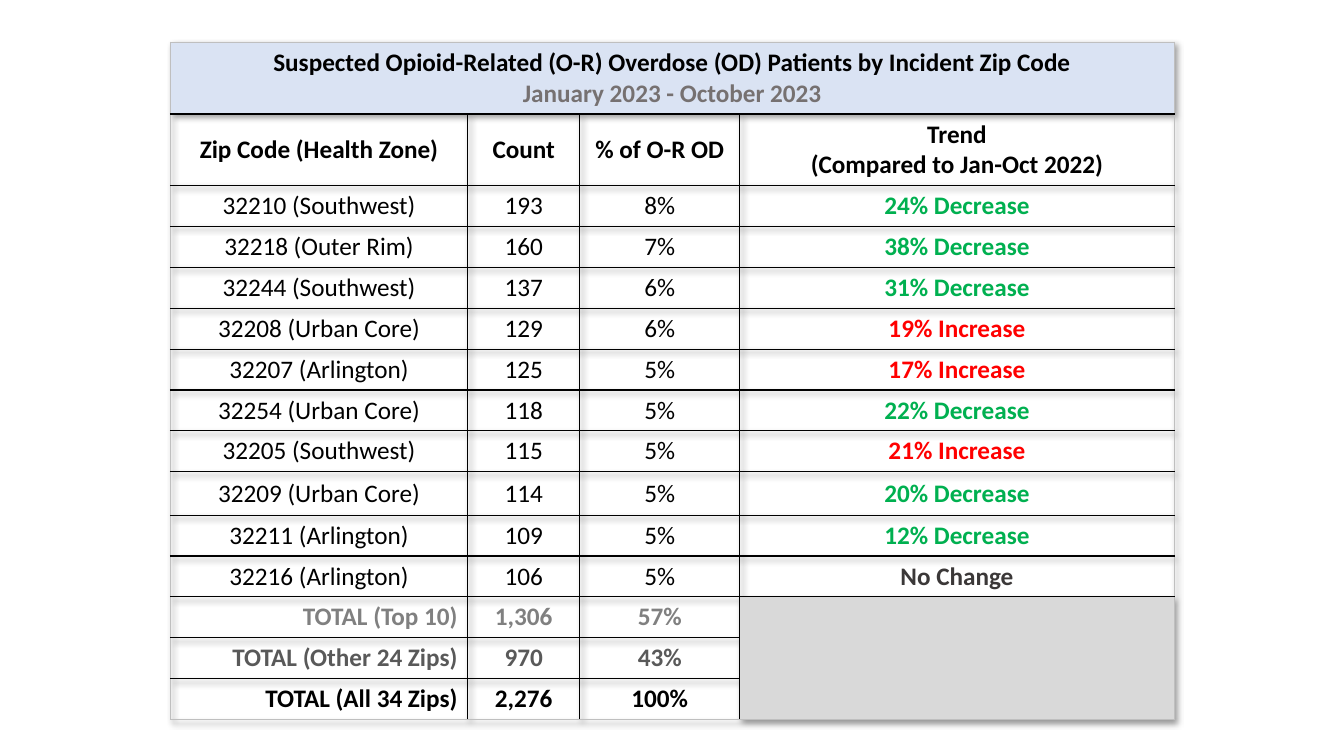
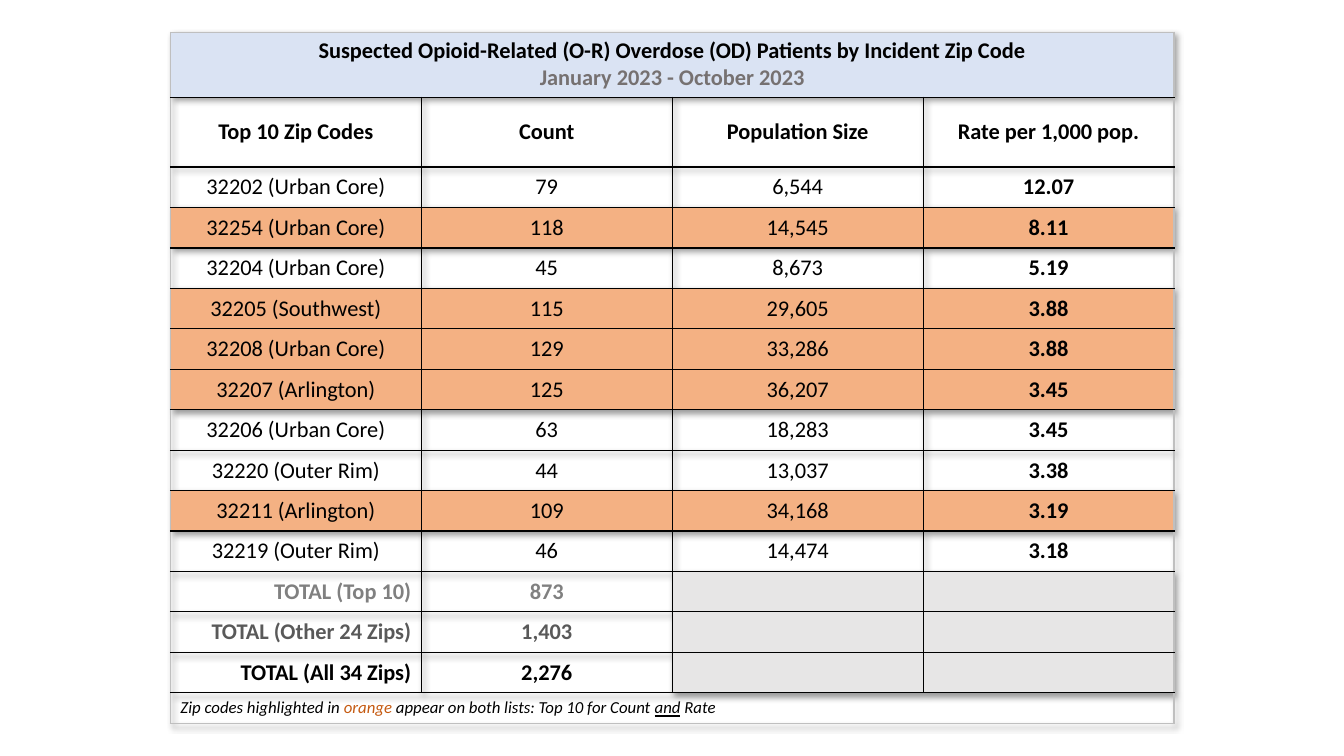
from dataclasses import dataclass

from lxml import etree
from pptx import Presentation
from pptx.dml.color import RGBColor
from pptx.enum.text import MSO_ANCHOR, PP_ALIGN
from pptx.oxml.ns import qn
from pptx.util import Pt

MIDDLE = MSO_ANCHOR.MIDDLE
CENTER, LEFT, RIGHT = PP_ALIGN.CENTER, PP_ALIGN.LEFT, PP_ALIGN.RIGHT


@dataclass(frozen=True)
class Theme:
    font: str = "Calibri"
    black: str = "000000"
    period: str = "767171"
    banner: str = "DAE3F3"
    highlight: str = "F4B183"
    highlight_word: str = "C55A11"
    decrease: str = "00B050"
    increase: str = "FF0000"
    unchanged: str = "3B3838"
    outer_edge: str = "BFBFBF"
    trend_blank: str = "D9D9D9"
    rate_blank: str = "E7E6E6"
    total_inks: tuple = ("808080", "595959", "000000")
    count_size: int = 18
    rate_size: int = 16
    note_size: int = 12
    rule: float = 1


THEME = Theme()
TABLE_LEFT, TABLE_WIDTH = 121.7, 717
BANNER = (
    "Suspected Opioid-Related (O-R) Overdose (OD) Patients by Incident Zip Code",
    "January 2023 - October 2023",
)
TOTAL_LABELS = ("TOTAL (Top 10)", "TOTAL (Other 24 Zips)", "TOTAL (All 34 Zips)")

COUNT_HEADINGS = ("Zip Code (Health Zone)", "Count", "% of O-R OD",
                  "Trend\n(Compared to Jan-Oct 2022)")
COUNT_ROWS = (
    ("32210 (Southwest)", "193", "8%", "24% Decrease"),
    ("32218 (Outer Rim)", "160", "7%", "38% Decrease"),
    ("32244 (Southwest)", "137", "6%", "31% Decrease"),
    ("32208 (Urban Core)", "129", "6%", "19% Increase"),
    ("32207 (Arlington)", "125", "5%", "17% Increase"),
    ("32254 (Urban Core)", "118", "5%", "22% Decrease"),
    ("32205 (Southwest)", "115", "5%", "21% Increase"),
    ("32209 (Urban Core)", "114", "5%", "20% Decrease"),
    ("32211 (Arlington)", "109", "5%", "12% Decrease"),
    ("32216 (Arlington)", "106", "5%", "No Change"),
)
COUNT_TOTALS = (("1,306", "57%"), ("970", "43%"), ("2,276", "100%"))

RATE_HEADINGS = ("Top 10 Zip Codes", "Count", "Population Size", "Rate per 1,000 pop.")
RATE_ROWS = (
    ("32202 (Urban Core)", "79", "6,544", "12.07"),
    ("32254 (Urban Core)", "118", "14,545", "8.11"),
    ("32204 (Urban Core)", "45", "8,673", "5.19"),
    ("32205 (Southwest)", "115", "29,605", "3.88"),
    ("32208 (Urban Core)", "129", "33,286", "3.88"),
    ("32207 (Arlington)", "125", "36,207", "3.45"),
    ("32206 (Urban Core)", "63", "18,283", "3.45"),
    ("32220 (Outer Rim)", "44", "13,037", "3.38"),
    ("32211 (Arlington)", "109", "34,168", "3.19"),
    ("32219 (Outer Rim)", "46", "14,474", "3.18"),
)
RATE_TOTALS = (("873",), ("1,403",), ("2,276",))


def add_run(paragraph, text, size, ink=THEME.black, bold=False, italic=False, underline=False):
    run = paragraph.add_run()
    run.text = text
    font = run.font
    font.name, font.size = THEME.font, Pt(size)
    font.bold, font.italic, font.underline = bold, italic, underline
    font.color.rgb = RGBColor.from_string(ink)


def write_cell(cell, text, size, ink=THEME.black, bold=False, align=CENTER):
    frame = cell.text_frame
    for index, line in enumerate(text.split("\n")):
        paragraph = frame.add_paragraph() if index else frame.paragraphs[0]
        paragraph.alignment = align
        add_run(paragraph, line, size, ink, bold)


def fill_cell(cell, colour):
    cell.fill.solid()
    cell.fill.fore_color.rgb = RGBColor.from_string(colour)


def draw_edge(cell, side, colour):
    edge = etree.SubElement(cell._tc.get_or_add_tcPr(), qn(f"a:ln{side}"),
                            w=str(Pt(THEME.rule)))
    if colour is None:
        etree.SubElement(edge, qn("a:noFill"))
    else:
        solid = etree.SubElement(edge, qn("a:solidFill"))
        etree.SubElement(solid, qn("a:srgbClr"), val=colour)


def draw_edges(table, merges):
    last_row, last_column = len(table.rows) - 1, len(table.columns) - 1
    for row in range(last_row + 1):
        for column in range(last_column + 1):
            top, left, bottom, right = next(
                (m for m in merges if m[0] <= row <= m[2] and m[1] <= column <= m[3]),
                (row, column, row, column))
            cell = table.cell(row, column)
            is_origin = (row, column) == (top, left)
            for side, at_edge, outside in (
                ("L", column == left, left == 0),
                ("R", column == right, right == last_column),
                ("T", row == top, top == 0),
                ("B", row == bottom, bottom == last_row),
            ):
                visible = THEME.outer_edge if outside else THEME.black
                draw_edge(cell, side, visible if at_edge or is_origin else None)
            cell.fill.background()
            cell.vertical_anchor = MIDDLE


def add_shadow(table):
    effects = etree.Element(qn("a:effectLst"))
    shadow = etree.SubElement(effects, qn("a:outerShdw"), blurRad=str(Pt(4)),
                              dist=str(Pt(3)), dir="2700000", algn="tl", rotWithShape="0")
    ink = etree.SubElement(shadow, qn("a:srgbClr"), val=THEME.black)
    etree.SubElement(ink, qn("a:alpha"), val="40000")
    table._tbl.tblPr.insert(0, effects)


def add_grid(slide, box, widths, heights, merges):
    table = slide.shapes.add_table(len(heights), len(widths), *map(Pt, box)).table
    table.first_row = table.horz_banding = False
    for column, width in zip(table.columns, widths):
        column.width = Pt(width)
    for row, height in zip(table.rows, heights):
        row.height = Pt(height)
    draw_edges(table, merges)
    for top, left, bottom, right in merges:
        table.cell(top, left).merge(table.cell(bottom, right))
    add_shadow(table)
    return table


def write_banner(table, size):
    cell = table.cell(0, 0)
    fill_cell(cell, THEME.banner)
    title, period = BANNER
    write_cell(cell, title, size, bold=True)
    line = cell.text_frame.add_paragraph()
    line.alignment = CENTER
    add_run(line, period, size, THEME.period, bold=True)


def write_headings(table, headings, size):
    for column, heading in enumerate(headings):
        write_cell(table.cell(1, column), heading, size, bold=True)


def write_totals(table, first_row, totals, size):
    for offset, (label, ink, values) in enumerate(zip(TOTAL_LABELS, THEME.total_inks, totals)):
        row = first_row + offset
        write_cell(table.cell(row, 0), label, size, ink, True, RIGHT)
        for column, value in enumerate(values, 1):
            write_cell(table.cell(row, column), value, size, ink, True)


def size_empty_cells(table, size):
    for cell in table.iter_cells():
        if not cell.text_frame.text:
            etree.SubElement(cell.text_frame.paragraphs[0]._p, qn("a:endParaRPr"),
                             sz=str(size * 100))


def trend_ink(trend):
    if trend.endswith("Decrease"):
        return THEME.decrease
    return THEME.increase if trend.endswith("Increase") else THEME.unchanged


def count_table(slide, left, top, width):
    size = THEME.count_size
    heights = [51.2, 51.2] + [29.2] * 7 + [31] + [29.2] * 5
    widths = [212.4, 80, 114.4]
    widths.append(width - sum(widths))
    totals_row = 2 + len(COUNT_ROWS)
    merges = [(0, 0, 0, 3), (totals_row, 3, totals_row + 2, 3)]
    table = add_grid(slide, (left, top, width, sum(heights)), widths, heights, merges)
    write_banner(table, size)
    write_headings(table, COUNT_HEADINGS, size)
    for row, (*values, trend) in enumerate(COUNT_ROWS, 2):
        for column, value in enumerate(values):
            write_cell(table.cell(row, column), value, size)
        write_cell(table.cell(row, 3), trend, size, trend_ink(trend), True)
    write_totals(table, totals_row, COUNT_TOTALS, size)
    fill_cell(table.cell(totals_row, 3), THEME.trend_blank)
    size_empty_cells(table, THEME.note_size)


def write_note(cell):
    note = cell.text_frame.paragraphs[0]
    note.alignment = LEFT
    for text, ink, underline in (
        ("Zip codes highlighted in ", THEME.black, False),
        ("orange", THEME.highlight_word, False),
        (" appear on both lists: Top 10 for Count ", THEME.black, False),
        ("and", THEME.black, True),
        (" Rate", THEME.black, False),
    ):
        add_run(note, text, THEME.note_size, ink, italic=True, underline=underline)


def rate_table(slide, left, top, width):
    size = THEME.rate_size
    heights = [46.4, 50] + [28.9] * 13 + [22]
    totals_row = 2 + len(RATE_ROWS)
    note_row = totals_row + len(RATE_TOTALS)
    merges = [(0, 0, 0, 3), (note_row, 0, note_row, 3)]
    table = add_grid(slide, (left, top, width, sum(heights)), [width / 4] * 4, heights, merges)
    write_banner(table, size)
    write_headings(table, RATE_HEADINGS, size)
    top_count_zips = {values[0] for values in COUNT_ROWS}
    for row, values in enumerate(RATE_ROWS, 2):
        for column, value in enumerate(values):
            cell = table.cell(row, column)
            write_cell(cell, value, size, bold=column == 3)
            if values[0] in top_count_zips:
                fill_cell(cell, THEME.highlight)
    write_totals(table, totals_row, RATE_TOTALS, size)
    for row in range(totals_row, note_row):
        for column in (2, 3):
            fill_cell(table.cell(row, column), THEME.rate_blank)
    write_note(table.cell(note_row, 0))
    size_empty_cells(table, THEME.note_size)


def main():
    deck = Presentation()
    deck.slide_width, deck.slide_height = Pt(960), Pt(540)
    blank = deck.slide_layouts.get_by_name("Blank")
    for build_table, top in ((count_table, 30.2), (rate_table, 23)):
        build_table(deck.slides.add_slide(blank), TABLE_LEFT, top, TABLE_WIDTH)
    deck.save("out.pptx")


if __name__ == "__main__":
    main()
